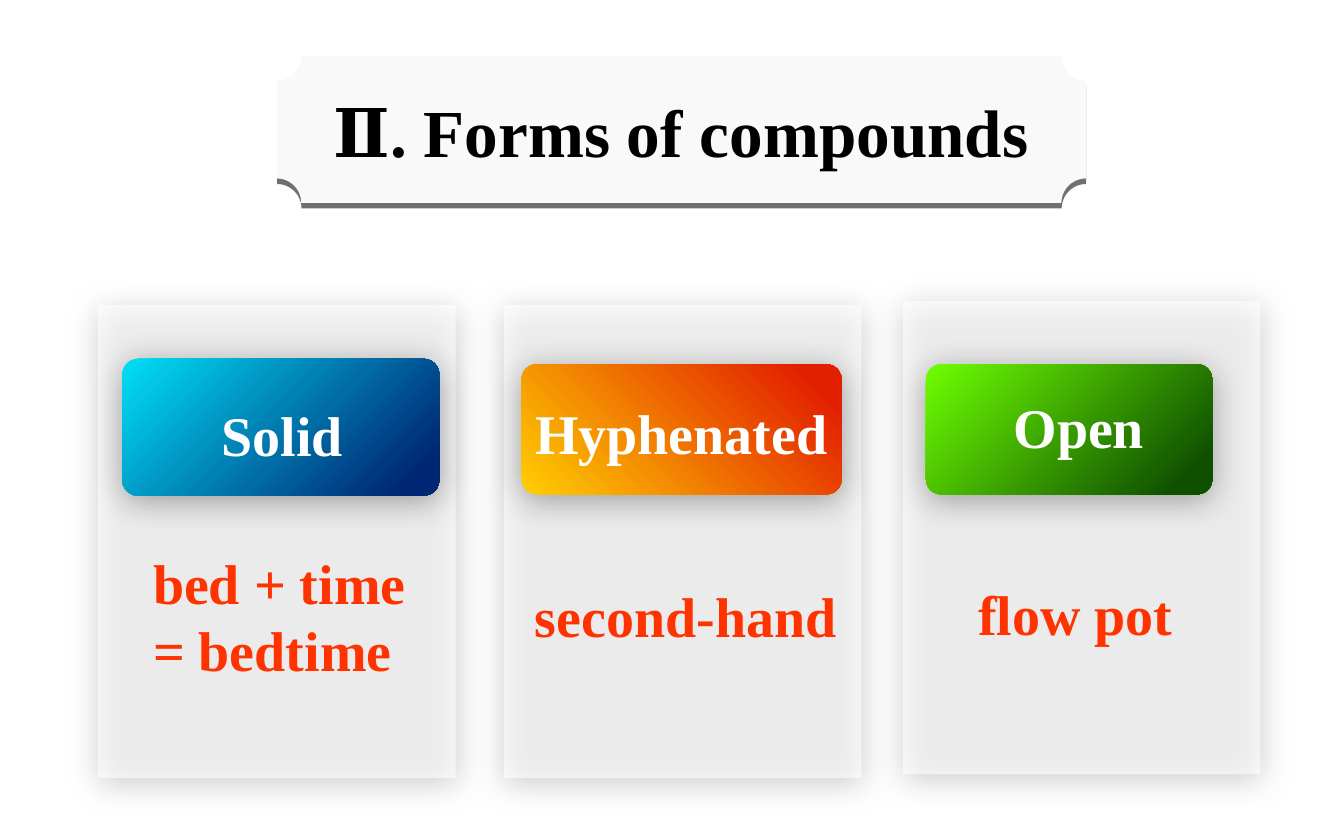
from lxml.etree import SubElement
from pptx import Presentation
from pptx.dml.color import RGBColor
from pptx.enum.shapes import MSO_SHAPE
from pptx.enum.text import MSO_ANCHOR, PP_ALIGN
from pptx.oxml.ns import qn
from pptx.util import Pt

HUES = {
    "white": "FFFFFF", "black": "000000", "plate": "F9F9F9", "edge": "707070",
    "word": "FF3300", "cyan": "00DFF6", "navy": "002774", "gold": "FFCF01",
    "red": "E22000", "lime": "6EFF01", "green": "0F5000",
}
FONT = "Times New Roman"
TITLE = "Ⅱ. Forms of compounds"
PLATE = (148.3, 30.2, 433.4, 78.5)
HEAD = (171.4, 44.6, 396, 51.1)
WIDE, HIGH = 191.5, 253.4
LEFT, MID = PP_ALIGN.LEFT, PP_ALIGN.CENTER
CARDS = [
    {"at": (52.6, 163.4), "badge": (65.5, 192.2, 169.9, 73.4),
     "fade": ("cyan", "navy", 315),
     "name": ("Solid", (111.6, 211, 118.8, 43.9), LEFT),
     "case": (["bed + time", "= bedtime"], (74.9, 290.2, 159.1, 79.9))},
    {"at": (270, 163.4), "badge": (279.4, 195.1, 171.4, 69.8),
     "fade": ("gold", "red", 45),
     "name": ("Hyphenated", (275, 210.2, 180, 43.9), MID),
     "case": (["second-hand"], (279.4, 308.2, 180.7, 43.9))},
    {"at": (483.8, 161.3), "badge": (496.1, 195.1, 153.4, 69.8),
     "fade": ("lime", "green", 315),
     "name": ("Open", (528, 206.6, 100, 43.9), MID),
     "case": (["flow pot"], (517, 306.7, 128.9, 43.9))},
]


def tint(key):
    return RGBColor.from_string(HUES[key])


def shade(shape, key, blur, alpha):
    shape.shadow.inherit = False
    effects = shape._element.spPr.find(qn("a:effectLst"))
    outer = SubElement(effects, qn("a:outerShdw"), blurRad=str(Pt(blur)),
                       dist=str(Pt(3)), dir=str(87 * 60000), algn="ctr",
                       rotWithShape="0")
    hue = SubElement(outer, qn("a:srgbClr"), val=HUES[key])
    SubElement(hue, qn("a:alpha"), val=str(alpha * 1000))


def draw(slide, kind, box, key="white"):
    shape = slide.shapes.add_shape(kind, *map(Pt, box))
    shape.fill.solid()
    shape.fill.fore_color.rgb = tint(key)
    shape.line.fill.background()
    return shape


def write(shape, lines, size, key, align=LEFT):
    frame = shape.text_frame
    frame.word_wrap = True
    frame.vertical_anchor = MSO_ANCHOR.TOP
    frame.text = "\n".join(lines)
    for para in frame.paragraphs:
        para.alignment = align
        para.line_spacing = 1.0
        para.space_before = Pt(0)
        font = para.font
        font.name, font.size, font.bold = FONT, Pt(size), True
        font.color.rgb = tint(key)


def label(slide, lines, box, key, align=LEFT):
    write(slide.shapes.add_textbox(*map(Pt, box)), lines, 30, key, align)


def main():
    """Build the slide on the forms of compounds."""
    deck = Presentation()
    deck.slide_width, deck.slide_height = Pt(720), Pt(450)
    slide = deck.slides.add_slide(deck.slide_layouts[5])
    plate = draw(slide, MSO_SHAPE.PLAQUE, PLATE, "plate")
    shade(plate, "edge", 0, 100)

    for card in CARDS:
        panel = draw(slide, MSO_SHAPE.RECTANGLE, (*card["at"], WIDE, HIGH))
        hue = panel._element.spPr.find(".//" + qn("a:srgbClr"))
        SubElement(hue, qn("a:alpha"), val="60000")
        shade(panel, "black", 17.8, 33)

    for card in CARDS:
        badge = draw(slide, MSO_SHAPE.ROUNDED_RECTANGLE, card["badge"])
        badge.adjustments[0] = 0.117
        *ends, angle = card["fade"]
        badge.fill.gradient()
        badge.fill.gradient_angle = angle
        for stop, key, place in zip(badge.fill.gradient_stops, ends, (0, 0.9)):
            stop.color.rgb = tint(key)
            stop.position = place
        shade(badge, "black", 17.8, 33)
        name, box, align = card["name"]
        label(slide, [name], box, "white", align)
        label(slide, *card["case"], "word")

    title = slide.shapes.title
    title.left, title.top, title.width, title.height = map(Pt, HEAD)
    write(title, [TITLE], 36, "black")
    plate._element.addnext(title._element)
    deck.save("out.pptx")


if __name__ == "__main__":
    main()
